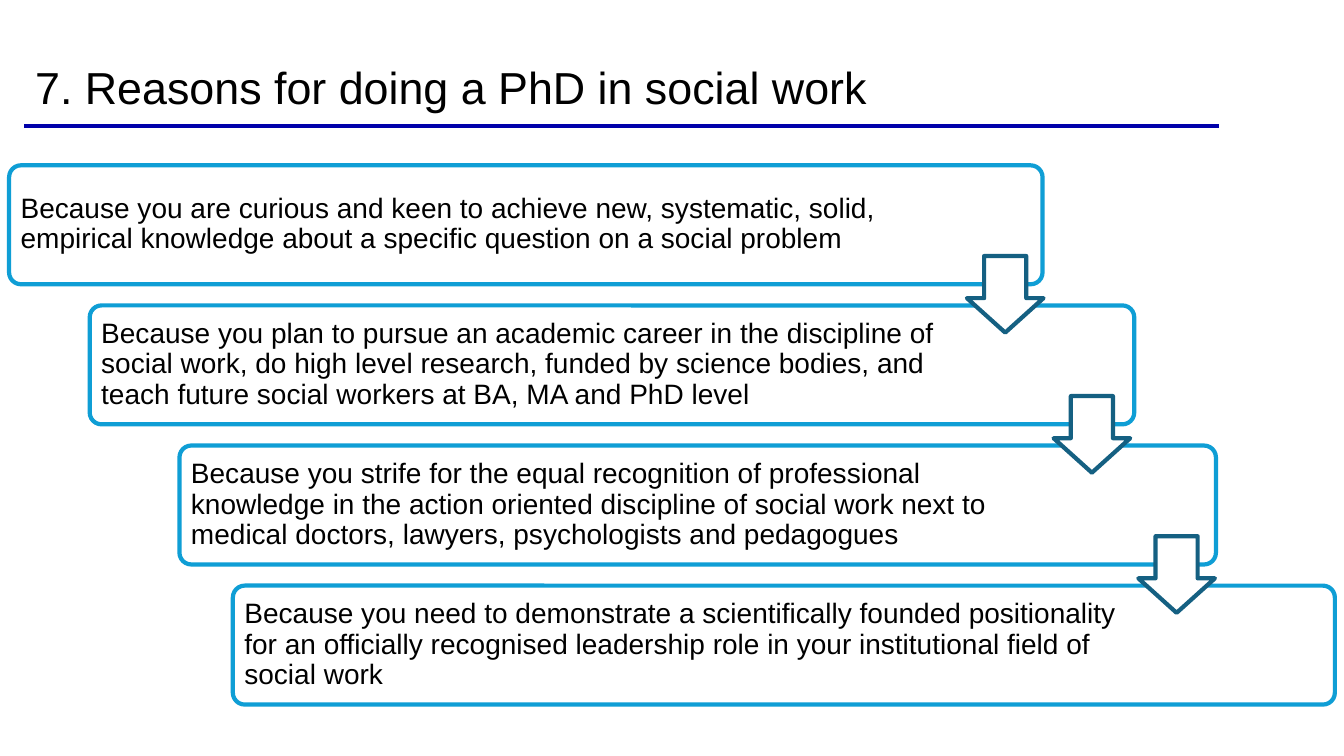
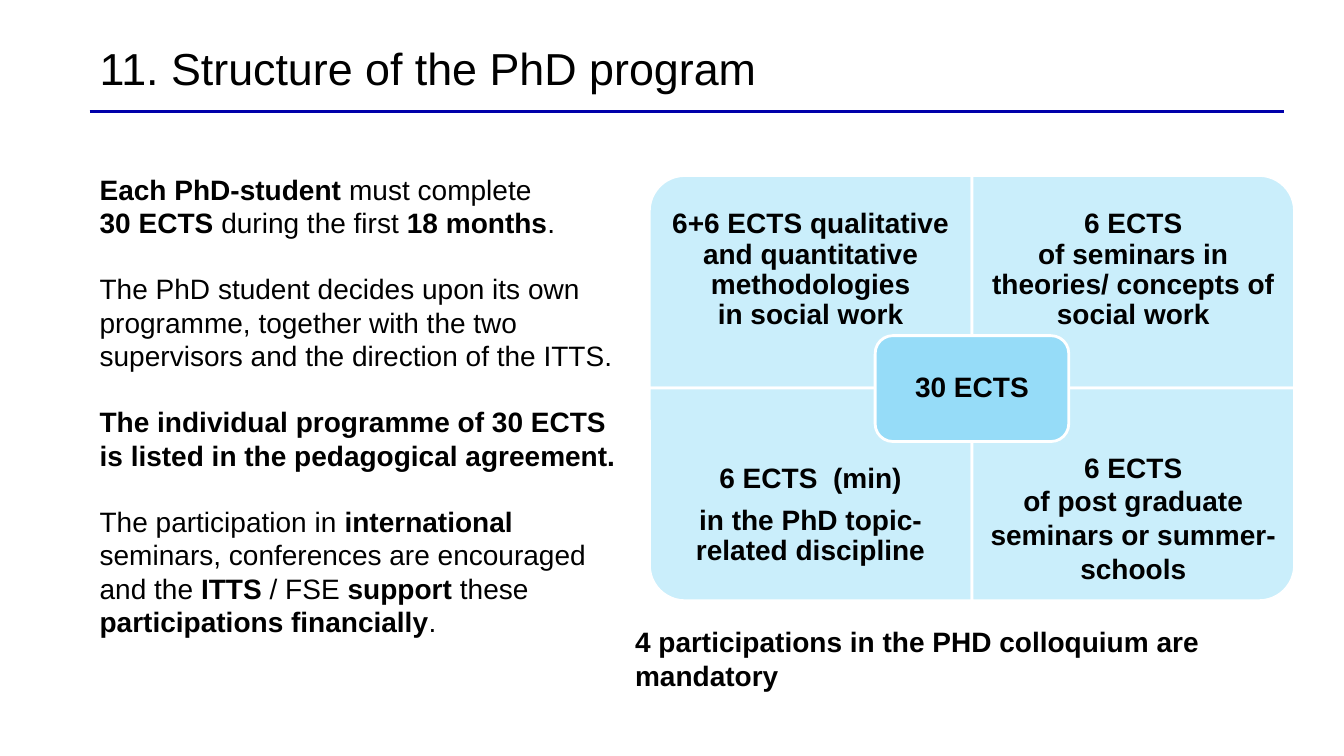
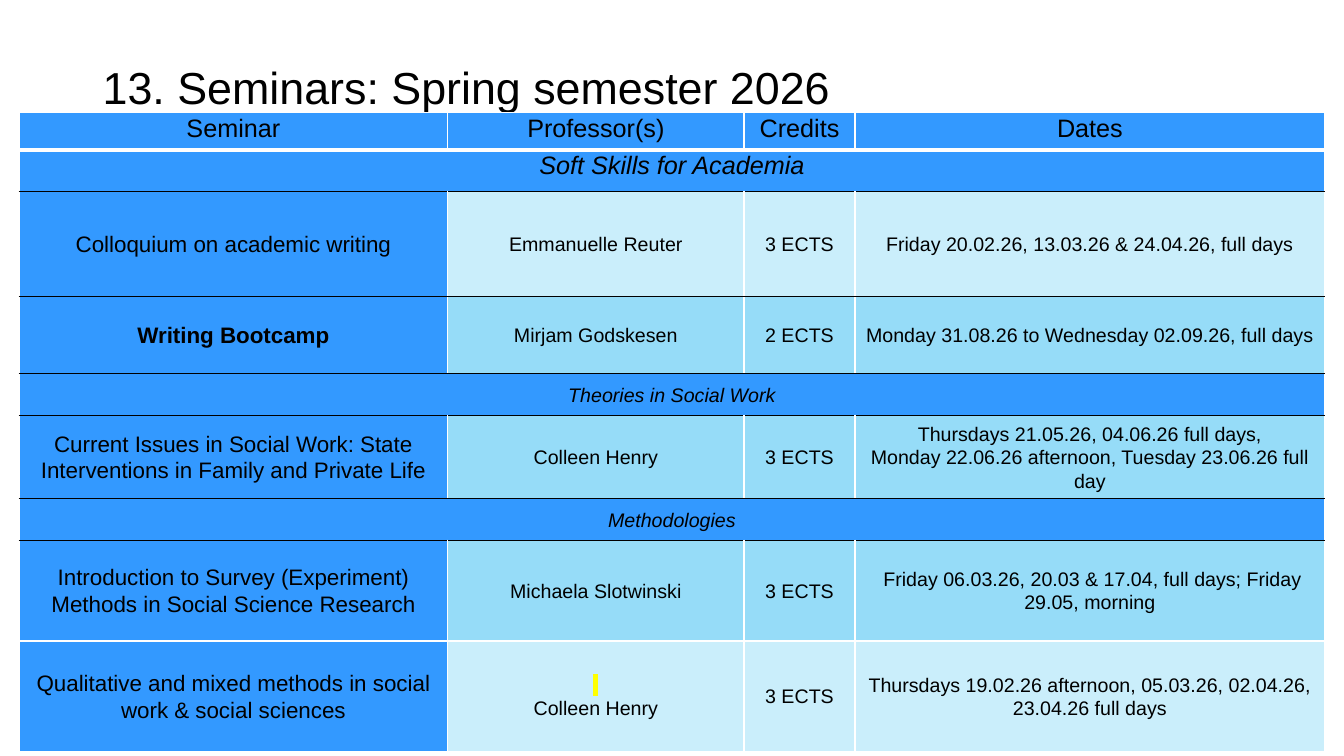
import pptx
import pptx.util
import pptx.dml.color
import pptx.enum.shapes
import pptx.enum.text
import pptx.oxml
import pptx.oxml.ns
from lxml import etree

Inches, Pt = pptx.util.Inches, pptx.util.Pt
RGB = pptx.dml.color.RGBColor
SHAPE = pptx.enum.shapes.MSO_SHAPE
ALIGN = pptx.enum.text.PP_ALIGN
ANCHOR = pptx.enum.text.MSO_ANCHOR
qn = pptx.oxml.ns.qn

FONT = "Arial"
COLORS = {
    "ink": "000000", "white": "FFFFFF", "rule": "0000AA",
    "step": "0F9ED5", "arrow": "156082",
    "light": "CAEEFB", "mid": "96DCF8", "head": "3399FF", "mark": "FFFF00",
}

# Step: left, width, text width, text
STEPS = [
    (0.09, 10.25, 8.88, "Because you are curious and keen to achieve new, systematic, solid, "
     "empirical knowledge about a specific question on a social problem"),
    (0.89, 10.36, 8.66, "Because you plan to pursue an academic career in the discipline of "
     "social work, do high level research, funded by science bodies, and teach future "
     "social workers at BA, MA and PhD level"),
    (1.78, 10.28, 8.59, "Because you strife for the equal recognition of professional "
     "knowledge in the action oriented discipline of social work next to medical doctors, "
     "lawyers, psychologists and pedagogues"),
    (2.31, 10.93, 9.14, "Because you need to demonstrate a scientifically founded "
     "positionality for an officially recognised leadership role in your institutional "
     "field of social work"),
]
ARROW_LEFTS = [9.59, 10.45, 11.29]

# Each block is a list of paragraphs; ** switches bold on and off
PROGRAM = [
    ["**Each PhD-student **must complete", "**30 ECTS **during the first **18 months**."],
    ["The PhD student decides upon its own programme, together with the two supervisors "
     "and the direction of the ITTS."],
    ["**The individual programme of 30 ECTS is listed in the pedagogical agreement.**"],
    ["The participation in **international **seminars, conferences are encouraged and the "
     "**ITTS** / FSE **support **these **participations financially**."],
]

# Quadrant: column, row, rotation, line spacing, top inset, bottom inset, paragraphs
QUADRANTS = [
    (0, 0, 270, 0.9, 0.36, 0.06,
     ["6+6 ECTS qualitative and quantitative methodologies\nin social work"]),
    (1, 0, 0, 0.9, 0.36, 0.06,
     ["6 ECTS\nof seminars in theories/ concepts of social work"]),
    (0, 1, 180, 0.9, 0, 0.34, ["6 ECTS  (min)", "in the PhD topic-related discipline"]),
    (1, 1, 90, 1, 0, 0.16, ["6 ECTS", "of post graduate seminars or summer-schools"]),
]

COLUMNS = [4.25, 2.94, 1.1, 4.66]
HEADER = ["Seminar", "Professor(s)", "Credits", "Dates"]
# Row: height, fill of the detail cells, cell texts (one text spans the table)
ROWS = [
    (0.37, "head", HEADER),
    (0.41, "head", ["Soft Skills for Academia"]),
    (1.04, "light", ["Colloquium on academic writing", "Emmanuelle Reuter", "3 ECTS",
                     "Friday 20.02.26, 13.03.26 & 24.04.26, full days"]),
    (0.77, "mid", ["**Writing Bootcamp**", "Mirjam Godskesen", "2 ECTS",
                   "Monday 31.08.26 to Wednesday 02.09.26, full days"]),
    (0.41, "head", ["Theories in Social Work"]),
    (0.83, "mid", ["Current Issues in Social Work: State Interventions in Family and "
                   "Private Life", "Colleen Henry", "3 ECTS",
                   ["Thursdays 21.05.26, 04.06.26 full days,",
                    "Monday 22.06.26 afternoon, Tuesday 23.06.26 full day"]]),
    (0.41, "head", ["Methodologies"]),
    (1.0, "mid", ["Introduction to Survey (Experiment) Methods in Social Science Research",
                  "Michaela Slotwinski", "3 ECTS",
                  " Friday 06.03.26, 20.03 & 17.04, full days; Friday 29.05, morning"]),
    (1.1, "light", ["Qualitative and mixed methods in social work & social sciences",
                    [" ", "Colleen Henry"], "3 ECTS",
                    "Thursdays 19.02.26 afternoon, 05.03.26, 02.04.26, 23.04.26 full days"]),
]
# Line under each row: colour, points
ROW_LINES = [("white", 3)] + [("ink", 1)] * 6 + [("white", 1)] * 2


def rgb(name):
    return RGB.from_string(COLORS[name])


def set_all(obj, values):
    for name, value in values.items():
        setattr(obj, name, value)


def set_frame(tf, anchor=ANCHOR.TOP, insets=(0.1, 0.05, 0.1, 0.05)):
    """Insets are left, top, right, bottom in inches."""
    sides = ("margin_left", "margin_top", "margin_right", "margin_bottom")
    set_all(tf, {"word_wrap": True, "vertical_anchor": anchor})
    set_all(tf, dict(zip(sides, map(Inches, insets))))


def write(p, text, size=20, bold=False, italic=False, **paragraph):
    """Fill a paragraph; ** toggles bold and a newline is a line break."""
    set_all(p, {"alignment": ALIGN.LEFT, **paragraph})
    for i, part in enumerate(text.split("**")):
        for j, line in enumerate(part.split("\n")):
            if j:
                p.add_line_break()
            if line:
                r = p.add_run()
                r.text = line
                set_all(r.font, {"name": FONT, "size": Pt(size), "italic": italic,
                                 "bold": bold or i % 2 == 1})
                r.font.color.rgb = rgb("ink")


def write_all(tf, texts, **style):
    for i, text in enumerate(texts):
        write(tf.add_paragraph() if i else tf.paragraphs[0], text, **style)


def add_text(s, box, texts, anchor=ANCHOR.TOP, insets=(0.1, 0.05, 0.1, 0.05), **style):
    tf = s.shapes.add_textbox(*map(Inches, box)).text_frame
    set_frame(tf, anchor, insets)
    write_all(tf, texts, **style)
    return tf


def add_box(s, kind, box, fill, line, width, adjust=()):
    sp = s.shapes.add_shape(kind, *map(Inches, box))
    sp.shadow.inherit = False
    sp.fill.solid()
    sp.fill.fore_color.rgb = rgb(fill)
    sp.line.color.rgb = rgb(line)
    sp.line.width = Pt(width)
    for i, value in enumerate(adjust):
        sp.adjustments[i] = value
    return sp


def add_title(s, text, left, top, width):
    add_text(s, (left, top, width, 1.45), [text], ANCHOR.MIDDLE, (0.1, 0.05, 0.1, 0.51),
             size=32, line_spacing=0.9)


def add_rule(s, left, y, length=11.85):
    ln = s.shapes.add_connector(pptx.enum.shapes.MSO_CONNECTOR.STRAIGHT,
                                *map(Inches, (left, y, left + length, y)))
    ln.line.color.rgb = rgb("rule")
    ln.line.width = Pt(2.25)
    etree.SubElement(ln._element.spPr, qn("a:effectLst"))


def set_borders(cell, top, bottom):
    tc_pr = cell._tc.get_or_add_tcPr()
    side = ("white", 1)
    edges = zip(("lnL", "lnR", "lnT", "lnB"), (side, side, top, bottom))
    for i, (tag, (color, width)) in enumerate(edges):
        ln = etree.Element(qn("a:" + tag), w=str(Pt(width)))
        fill = etree.SubElement(ln, qn("a:solidFill"))
        etree.SubElement(fill, qn("a:srgbClr"), val=COLORS[color])
        tc_pr.insert(i, ln)


def highlight(r, color):
    mark = etree.Element(qn("a:highlight"))
    etree.SubElement(mark, qn("a:srgbClr"), val=COLORS[color])
    r._r.rPr.find(qn("a:latin")).addprevious(mark)


def reasons_slide(s):
    add_title(s, "7. Reasons for doing a PhD in social work", 0.25, 0.4, 12.17)
    top, pitch, height, pad = 1.64, 1.39, 1.18, 0.08
    for i, (left, width, text_width, text) in enumerate(STEPS):
        sp = add_box(s, SHAPE.ROUNDED_RECTANGLE, (left, top + i * pitch, width, height),
                     "white", "step", 3, [0.1])
        set_frame(sp.text_frame, ANCHOR.MIDDLE,
                  (pad, pad, width - text_width + 0.01, pad))
        write_all(sp.text_frame, [text], line_spacing=0.9)
    for i, left in enumerate(ARROW_LEFTS):
        add_box(s, SHAPE.DOWN_ARROW, (left, top + 0.9 + i * pitch, 0.76, 0.76),
                "white", "arrow", 3, [0.55, 0.45])
    add_rule(s, 0.24, 1.25)


def structure_slide(s):
    add_title(s, "11. Structure of the PhD program", 0.89, 0.21, 11.69)
    tf = add_text(s, (0.89, 1.66, 5.43, 4.77), [p for block in PROGRAM for p in block])
    first = 0
    for block in PROGRAM[:-1]:
        first += len(block)
        tf.paragraphs[first].space_before = Pt(23)

    left, top, width, height = 6.44, 1.74, 3.2, 2.11
    text_height = 1.58
    for col, row, turn, spacing, inset_top, inset_bottom, texts in QUADRANTS:
        x, y = left + col * width, top + row * height
        w, h = (height, width) if turn % 180 else (width, height)
        sp = add_box(s, SHAPE.ROUND_1_RECTANGLE,
                     (x + (width - w) / 2, y + (height - h) / 2, w, h), "light", "white", 2)
        sp.rotation = turn
        add_text(s, (x, y + row * (height - text_height), width, text_height), texts,
                 ANCHOR.BOTTOM if row else ANCHOR.MIDDLE,
                 (0.16, inset_top, 0.16, inset_bottom), bold=True, alignment=ALIGN.CENTER,
                 line_spacing=spacing, space_after=Pt(8 if spacing < 1 else 0))
    hub = add_box(s, SHAPE.ROUNDED_RECTANGLE,
                  (left + width - 0.96, top + height - 0.52, 1.92, 1.05), "mid", "white", 2)
    set_frame(hub.text_frame, ANCHOR.MIDDLE, (0.08,) * 4)
    write_all(hub.text_frame, ["30 ECTS"], bold=True, alignment=ALIGN.CENTER,
              line_spacing=0.9)
    add_rule(s, 0.89, 1.11)
    add_text(s, (6.2, 6.15, 7.12, 0.74),
             ["4 participations in the PHD colloquium are mandatory"], bold=True)


def seminars_slide(s):
    add_title(s, "13. Seminars: Spring semester 2026", 0.92, 0.4, 11.5)
    heights = [row[0] for row in ROWS]
    table = s.shapes.add_table(len(ROWS), len(COLUMNS), *map(
        Inches, (0.19, 1.12, sum(COLUMNS), sum(heights)))).table
    for column, width in zip(table.columns, COLUMNS):
        column.width = Inches(width)
    for i, (height, fill, texts) in enumerate(ROWS):
        table.rows[i].height = Inches(height)
        section = len(texts) == 1
        for j in range(len(COLUMNS)):
            cell = table.cell(i, j)
            cell.fill.solid()
            cell.fill.fore_color.rgb = rgb(fill if j else "head")
            set_borders(cell, ROW_LINES[i - 1] if i else ("white", 1), ROW_LINES[i])
            set_all(cell, {"margin_left": Inches(0.07), "margin_right": Inches(0.07),
                           "margin_top": 0, "margin_bottom": 0,
                           "vertical_anchor": ANCHOR.TOP if i < 2 else ANCHOR.MIDDLE})
        if section:
            table.cell(i, 0).merge(table.cell(i, len(COLUMNS) - 1))
        for j, text in enumerate(texts):
            size = 18 if i < 2 else 14 if j or section else 16
            write_all(table.cell(i, j).text_frame,
                      text if isinstance(text, list) else [text], size=size,
                      italic=section, alignment=ALIGN.CENTER, line_spacing=1.07)
    last = table.cell(len(ROWS) - 1, 1).text_frame
    highlight(last.paragraphs[0].runs[0], "mark")


def main():
    prs = pptx.Presentation()
    prs.slide_width, prs.slide_height = Inches(13.33), Inches(7.5)
    for build in (reasons_slide, structure_slide, seminars_slide):
        build(prs.slides.add_slide(prs.slide_layouts[6]))
    prs.save("out.pptx")


if __name__ == "__main__":
    main()
